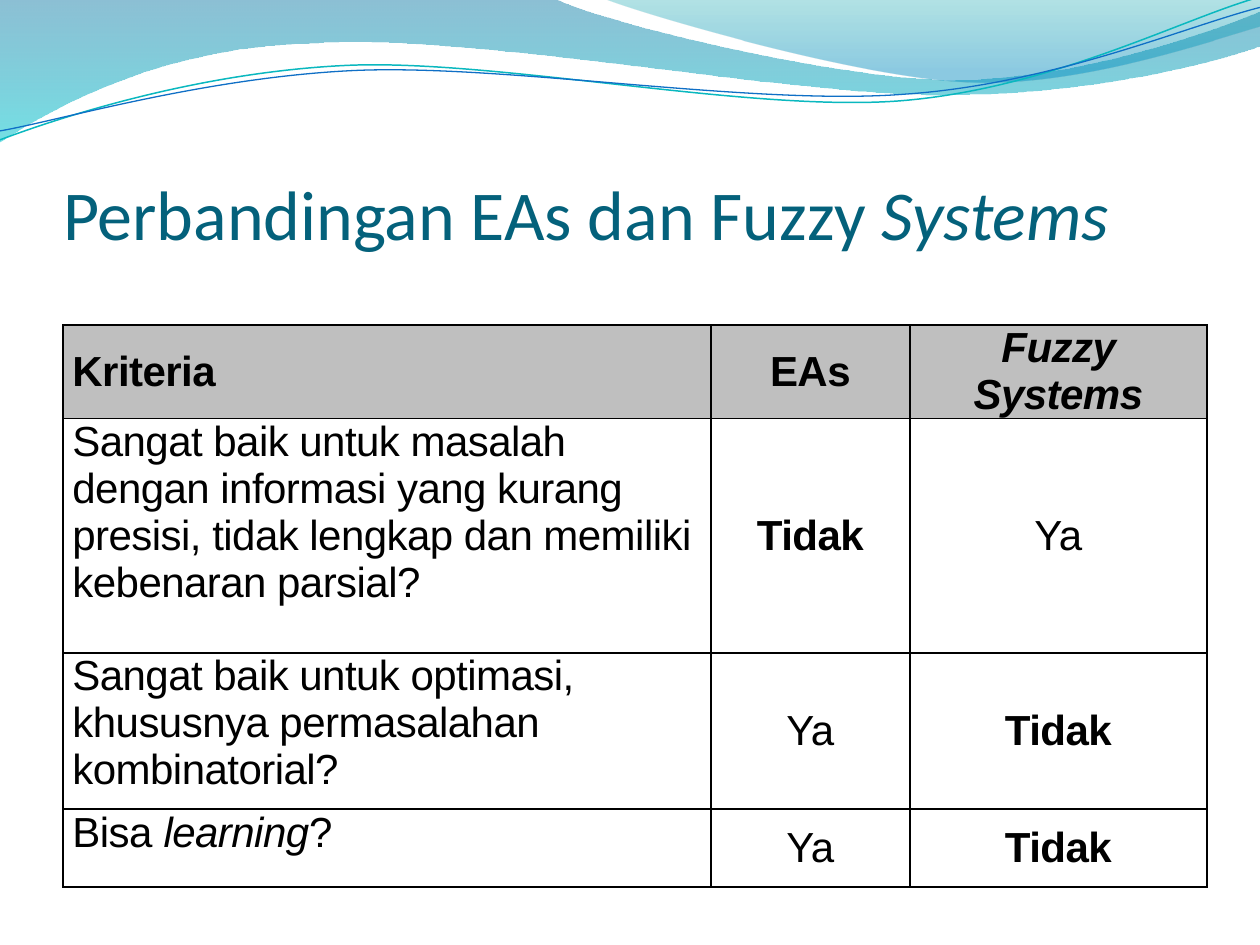
from dataclasses import dataclass

from lxml.etree import SubElement
from pptx import Presentation
from pptx.dml.color import RGBColor
from pptx.enum.text import MSO_ANCHOR as Anchor, PP_ALIGN as Align
from pptx.oxml.ns import qn
from pptx.shapes.autoshape import Shape
from pptx.slide import Slide
from pptx.table import _Cell as Cell
from pptx.util import Cm, Pt

TITLE_BLUE = RGBColor(0x04, 0x61, 0x7B)
DEEP_BLUE = RGBColor(0x00, 0x74, 0xA1)
AQUA = RGBColor(0x00, 0xC6, 0xCF)
TEAL = RGBColor(0x00, 0xA1, 0xA9)
SKY_BLUE = RGBColor(0x00, 0x8B, 0xBF)
LINE_TEAL = RGBColor(0x0A, 0xB8, 0xBF)
LINE_BLUE = RGBColor(0x0F, 0x6F, 0xC6)
HEADER_GRAY = RGBColor(0xBF, 0xBF, 0xBF)
BLACK = RGBColor(0, 0, 0)

UNITS_PER_CM = 100
WAVE_ROTATION = 357.3

Point = tuple[float, float]
Segment = tuple[Point, ...]


@dataclass
class Stop:
    position: float
    color: RGBColor
    opacity: int


@dataclass
class Band:
    start: Point
    segments: list[Segment]
    stops: tuple[Stop, Stop]


@dataclass
class Wave:
    start: Point
    segments: list[Segment]
    color: RGBColor
    width: float


@dataclass
class Span:
    text: str
    bold: bool = False
    italic: bool = False


BANDS = [
    Band((0, 0), [
        ((11.18, -0.03),),
        ((12.09, 0.43), (16.87, 1.6), (19.25, 1.6)),
        ((21.67, 1.6), (24.33, 0.66), (25.4, 0.23)),
        ((25.43, 0.91),),
        ((24.97, 1.12), (22.1, 1.93), (18.95, 1.91)),
        ((15.8, 1.91), (9.7, 0.71), (6.53, 0.86)),
        ((3.28, 0.91), (1.17, 2.11), (-0.03, 2.87)),
        ((0, 0),),
    ], (Stop(0, DEEP_BLUE, 45), Stop(1, AQUA, 55))),
    Band((12.17, -0.03), [
        ((12.93, 0.28), (17.32, 1.57), (19.53, 1.65)),
        ((21.74, 1.75), (24.41, 0.81), (25.4, 0.53)),
        ((25.4, 0),),
        ((12.17, -0.03),),
    ], (Stop(0, TEAL, 30), Stop(0.8, SKY_BLUE, 45))),
]
WAVES = [
    Wave((-0.05, 2.22), [
        ((1.19, 1.82), (4.02, 1.04), (7.05, 1.05)),
        ((10.05, 1.07), (15.02, 2.37), (18.08, 2.29)),
        ((21.13, 2.2), (23.86, 0.91), (25.41, 0.55)),
    ], LINE_TEAL, 0.85),
    Wave((-0.04, 2.04), [
        ((1.16, 1.89), (4.17, 1.15), (7.2, 1.16)),
        ((10.25, 1.18), (15.13, 2.25), (18.19, 2.16)),
        ((21.21, 2.1), (23.93, 1.06), (25.45, 0.75)),
    ], LINE_BLUE, 0.75),
]

TITLE = [Span("Perbandingan EAs dan Fuzzy "), Span("Systems", italic=True)]
YES = [Span("Ya")]
NO = [Span("Tidak", bold=True)]
ROWS = [
    [[Span("Kriteria", bold=True)], [Span("EAs", bold=True)],
     [Span("Fuzzy Systems", bold=True, italic=True)]],
    [[Span("Sangat baik untuk masalah dengan informasi yang kurang presisi, "
           "tidak lengkap dan memiliki kebenaran parsial?")], NO, YES],
    [[Span("Sangat baik untuk optimasi, khususnya permasalahan kombinatorial?")],
     YES, NO],
    [[Span("Bisa "), Span("learning", italic=True), Span("?")], YES, NO],
]
COLUMN_WIDTHS = [13.06, 4.01, 5.99]
ROW_HEIGHTS = [1.57, 4.72, 3.15, 1.57]


def draw_outline(slide: Slide, start: Point, segments: list[Segment], close: bool) -> Shape:
    points = [start, *(point for segment in segments for point in segment)]
    scaled = [(round(x * UNITS_PER_CM), round(y * UNITS_PER_CM)) for x, y in points]
    builder = slide.shapes.build_freeform(*scaled[0], scale=Cm(1) / UNITS_PER_CM)
    builder.add_line_segments(scaled[1:], close=close)
    shape = builder.convert_to_shape()
    shape.shadow.inherit = False
    bend_segments(shape, segments)
    return shape


def bend_segments(shape: Shape, segments: list[Segment]) -> None:
    outline = next(shape.element.iter(qn("a:path")))
    lines = iter(outline.findall(qn("a:lnTo")))
    for segment in segments:
        parts = [next(lines) for _ in segment]
        if len(parts) == 3:
            curve = outline.makeelement(qn("a:cubicBezTo"), {})
            parts[0].addprevious(curve)
            for part in parts:
                curve.append(part[0])
                outline.remove(part)


def draw_band(slide: Slide, band: Band) -> None:
    shape = draw_outline(slide, band.start, band.segments, True)
    shape.line.fill.background()
    shape.fill.gradient()
    shape.fill.gradient_angle = 270
    for gradient_stop, stop in zip(shape.fill.gradient_stops, band.stops):
        gradient_stop.position = stop.position
        gradient_stop.color.rgb = stop.color
    colors = shape.element.spPr.iter(qn("a:srgbClr"))
    for color, stop in zip(colors, band.stops):
        SubElement(color, qn("a:alpha"), val=str(stop.opacity * 1000))


def draw_wave(slide: Slide, wave: Wave) -> None:
    shape = draw_outline(slide, wave.start, wave.segments, False)
    shape.rotation = WAVE_ROTATION
    shape.fill.background()
    shape.line.color.rgb = wave.color
    shape.line.width = Pt(wave.width)


def write_spans(paragraph, spans: list[Span], font_name: str, size: int, color: RGBColor) -> None:
    for span in spans:
        run = paragraph.add_run()
        run.text = span.text
        font = run.font
        font.name, font.size = font_name, Pt(size)
        font.bold, font.italic = span.bold, span.italic
        font.color.rgb = color


def add_borders(cell: Cell) -> None:
    properties = cell._tc.get_or_add_tcPr()
    for index, side in enumerate(("lnL", "lnR", "lnT", "lnB")):
        line = properties.makeelement(qn(f"a:{side}"), {"w": str(Pt(1))})
        fill = SubElement(line, qn("a:solidFill"))
        SubElement(fill, qn("a:srgbClr"), val=str(BLACK))
        properties.insert(index, line)


def fill_cell(cell: Cell, spans: list[Span], header: bool, centered: bool) -> None:
    cell.margin_left = cell.margin_right = Cm(0.19)
    cell.margin_top = cell.margin_bottom = 0
    cell.vertical_anchor = Anchor.MIDDLE if header or centered else Anchor.TOP
    if header:
        cell.fill.solid()
        cell.fill.fore_color.rgb = HEADER_GRAY
    else:
        cell.fill.background()
    add_borders(cell)
    paragraph = cell.text_frame.paragraphs[0]
    paragraph.alignment = Align.CENTER if centered else Align.LEFT
    paragraph.space_before, paragraph.space_after = Pt(3), Pt(6)
    write_spans(paragraph, spans, "Arial", 24, BLACK)
    for run in paragraph.runs:
        run.font._element.set("spc", "-30")


def draw_title(slide: Slide) -> None:
    title = slide.shapes.title
    title.left, title.top, title.width, title.height = Cm(1.27), Cm(1.96), Cm(23.06), Cm(3.17)
    frame = title.text_frame
    frame.margin_left = frame.margin_right = frame.margin_bottom = 0
    frame.vertical_anchor = Anchor.BOTTOM
    frame.paragraphs[0].alignment = Align.LEFT
    write_spans(frame.paragraphs[0], TITLE, "Calibri", 40, TITLE_BLUE)
    title.element.getparent().append(title.element)


def draw_table(slide: Slide) -> None:
    table = slide.shapes.add_table(
        len(ROWS), len(COLUMN_WIDTHS), Cm(1.27), Cm(6.55),
        Cm(sum(COLUMN_WIDTHS)), Cm(sum(ROW_HEIGHTS))).table
    table.horz_banding = False
    for column, width in zip(table.columns, COLUMN_WIDTHS):
        column.width = Cm(width)
    for row_index, (row, height) in enumerate(zip(table.rows, ROW_HEIGHTS)):
        row.height = Cm(height)
        for column_index, cell in enumerate(row.cells):
            fill_cell(cell, ROWS[row_index][column_index], row_index == 0, column_index > 0)


def main() -> None:
    presentation = Presentation()
    presentation.slide_width, presentation.slide_height = Cm(25.4), Cm(19.05)
    slide = presentation.slides.add_slide(presentation.slide_layouts[5])
    for band in BANDS:
        draw_band(slide, band)
    for wave in WAVES:
        draw_wave(slide, wave)
    draw_title(slide)
    draw_table(slide)
    presentation.save("out.pptx")


if __name__ == "__main__":
    main()
